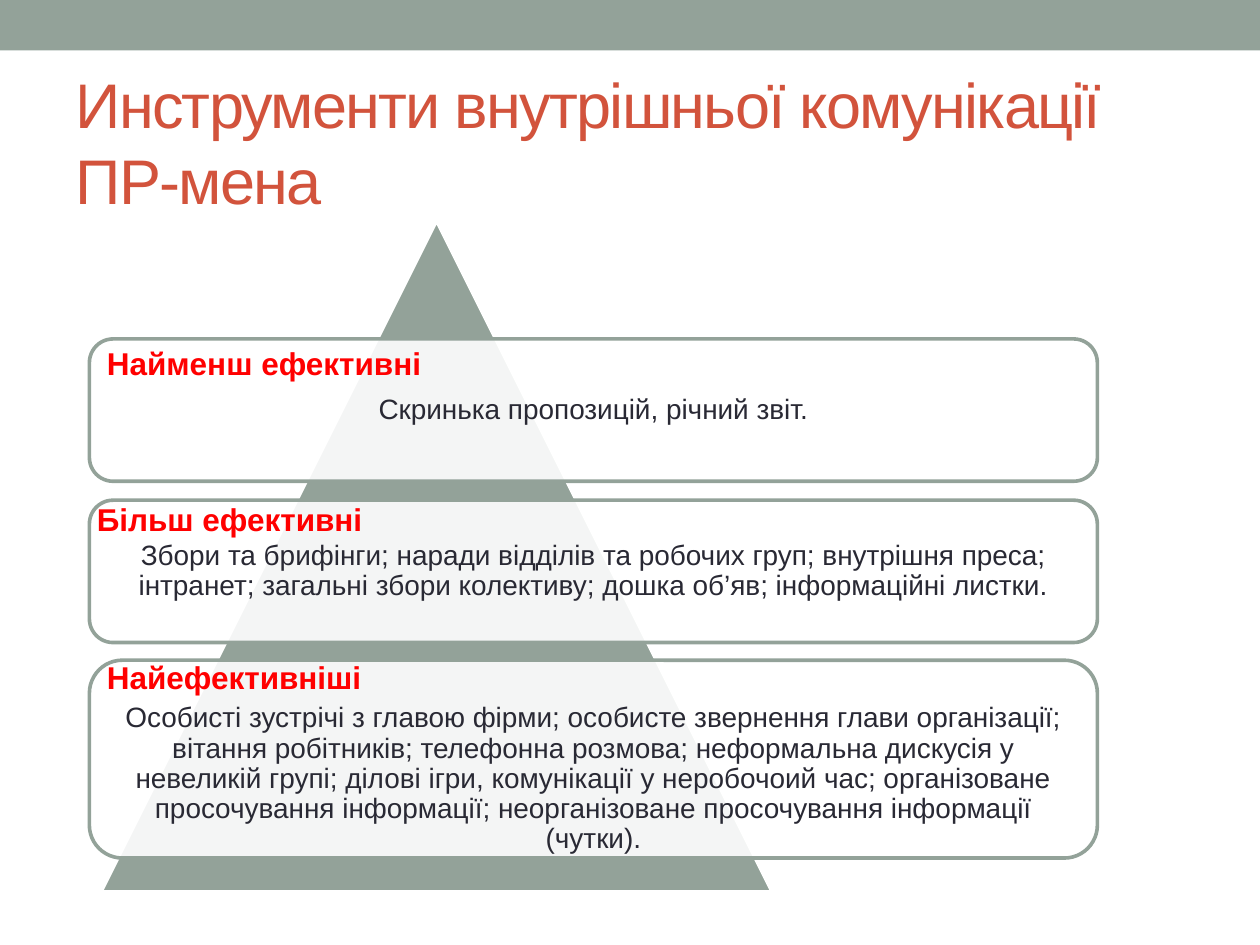
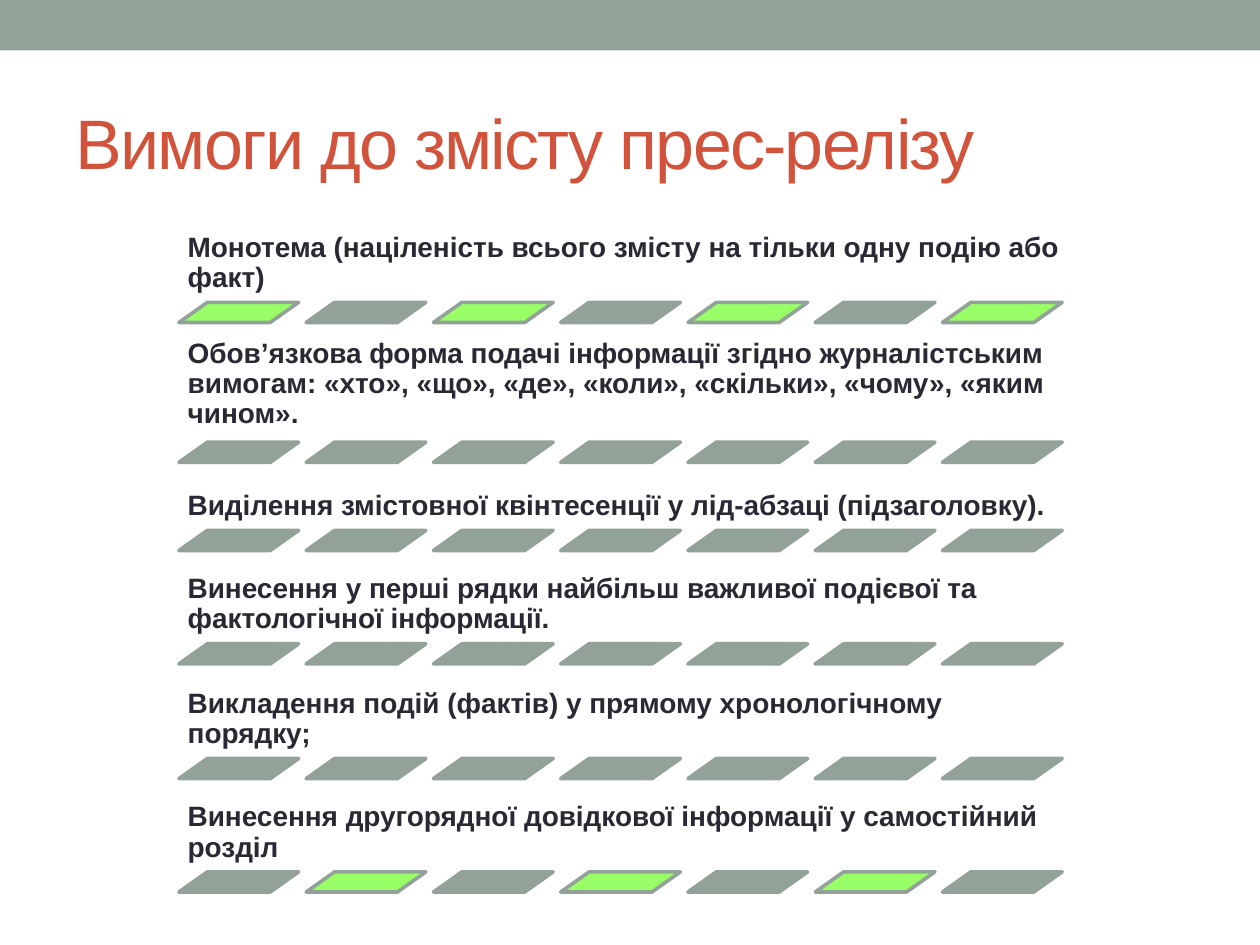
from lxml.etree import SubElement
from pptx import Presentation
from pptx.dml.color import RGBColor as RGB
from pptx.enum.shapes import MSO_SHAPE as Geo
from pptx.enum.text import MSO_ANCHOR as Anchor, MSO_AUTO_SIZE as Fit, PP_ALIGN as Align
from pptx.oxml.ns import qn
from pptx.util import Inches, Pt

HUES = {"sage": "93A299", "rust": "D2533C", "ink": "292934",
        "red": "FF0000", "lime": "99FF66", "white": "FFFFFF"}
FONT = "Arial"
EDGE = 2.08
CARDS = [
    (2.69, 1.13, 0, "Скринька пропозицій, річний звіт.",
     "Найменш ефективні", 0.04, -0.01),
    (3.97, 1.13, 0, "Збори та брифінги; наради відділів та робочих груп; внутрішня преса; "
     "інтранет; загальні збори колективу; дошка об’яв; інформаційні листки.",
     "Більш ефективні", -0.04, -0.05),
    (5.24, 1.57, 0.16, "Особисті зустрічі з главою фірми; особисте звернення глави організації; "
     "вітання робітників; телефонна розмова; неформальна дискусія у невеликій групі; "
     "ділові ігри, комунікації у неробочоий час; організоване просочування інформації; "
     "неорганізоване просочування інформації (чутки).",
     "Найефективніші", 0.04, -0.07),
]
RULES = [
    (2.4, 0, (0, 2, 4, 6), "Монотема (націленість всього змісту на тільки одну подію або факт)"),
    (3.51, 0.03, (), "Обов’язкова форма подачі інформації згідно журналістським вимогам: "
     "«хто», «що», «де», «коли», «скільки», «чому», «яким чином»."),
    (4.21, 0, (), "Виділення змістовної квінтесенції у лід-абзаці (підзаголовку)."),
    (5.11, 0, (), "Винесення у перші рядки найбільш важливої подієвої та фактологічної інформації."),
    (6.02, 0, (), "Викладення подій (фактів) у прямому хронологічному порядку;"),
    (6.92, 0, (1, 3, 5), "Винесення другорядної довідкової інформації у самостійний розділ"),
]


def hue(name):
    return RGB.from_string(HUES[name])


def write(frame, text, size=16, tint="ink", bold=False, align=Align.LEFT,
          anchor=Anchor.MIDDLE, pad=0.07, lead=0.9, track=0):
    frame.word_wrap = True
    frame.auto_size = Fit.NONE
    frame.vertical_anchor = anchor
    frame.margin_left = frame.margin_right = Inches(max(pad, 0.07))
    frame.margin_top = frame.margin_bottom = Inches(min(pad, 0.07))
    if pad == 0.1:
        frame.margin_top = frame.margin_bottom = Inches(0.05)
    par = frame.paragraphs[0]
    par.alignment = align
    par.line_spacing = lead
    run = par.add_run()
    run.text = text
    font = run.font
    font.name, font.size, font.bold = FONT, Pt(size), bold
    font.color.rgb = hue(tint)
    if track:
        font._element.set("spc", str(track * 100))


def label(slide, text, box, **form):
    area = slide.shapes.add_textbox(*map(Inches, box))
    write(area.text_frame, text, **form)


def draw(slide, geo, box, fill, line=None, alpha=None):
    shape = slide.shapes.add_shape(geo, *map(Inches, box))
    shape.shadow.inherit = False
    shape.fill.solid()
    shape.fill.fore_color.rgb = hue(fill)
    if alpha:
        tone = shape.element.spPr.find(qn("a:solidFill"))[0]
        SubElement(tone, qn("a:alpha"), val=str(alpha * 1000))
    if line:
        shape.line.color.rgb = hue(line)
        shape.line.width = Pt(EDGE)
    else:
        shape.line.fill.background()
    return shape


def start(deck, text, size):
    slide = deck.slides.add_slide(deck.slide_layouts[5])
    title = slide.shapes.title
    title.left, title.top, title.width, title.height = map(Inches, (0.5, 0.58, 9, 1.08))
    write(title.text_frame, text, size=size, tint="rust", pad=0.1, lead=1, track=-1)
    return slide


def add_band(deck, slide):
    band = draw(slide, Geo.RECTANGLE, (0, 0, 10, 0.4), "sage")
    band.element.nvSpPr.cNvPr.set("id", "99")
    deck.slide_layouts[5].shapes.element.insert(2, band.element)


def add_card(slide, box, drop, text):
    left, top, wide, high = box
    draw(slide, Geo.ROUNDED_RECTANGLE, box, "white", "sage", 90)
    gap = 0.049 * high
    inner = (left + gap, top + gap + drop, wide - 2 * gap, high - 2 * gap)
    label(slide, text, inner, align=Align.CENTER)


def add_peak(slide, left, wide):
    draw(slide, Geo.ISOSCELES_TRIANGLE, (0.8, 1.75, 5.33, 5.33), "sage", "white")
    for top, high, drop, text, *_ in CARDS:
        add_card(slide, (left, top, wide, high), drop, text)
    for top, *_, head, dx, dy in CARDS:
        label(slide, head, (left + dx, top + dy, 3.17, 0.4), size=18, tint="red",
              bold=True, anchor=Anchor.TOP, pad=0.1, lead=1)


def add_rule(slide, left, top, gap, limes, text):
    label(slide, text, (left, top - gap - 0.65, 7.16, 0.65),
          bold=True, anchor=Anchor.BOTTOM)
    for col in range(7):
        tint = "lime" if col in limes else "sage"
        box = (left + col * 1.01, top, 0.95, 0.16)
        draw(slide, Geo.PARALLELOGRAM, box, tint, "sage").adjustments[0] = 1.41


def main():
    deck = Presentation()
    deck.slide_width, deck.slide_height = Inches(10), Inches(7.5)
    tools = start(deck, "Инструменти внутрішньої комунікації ПР-мена", 36)
    add_band(deck, tools)
    add_peak(tools, 0.71, 8)
    press = start(deck, "Вимоги до змісту прес-релізу", 40)
    for top, gap, limes, text in RULES:
        add_rule(press, 1.42, top, gap, limes, text)
    deck.save("out.pptx")


if __name__ == "__main__":
    main()
